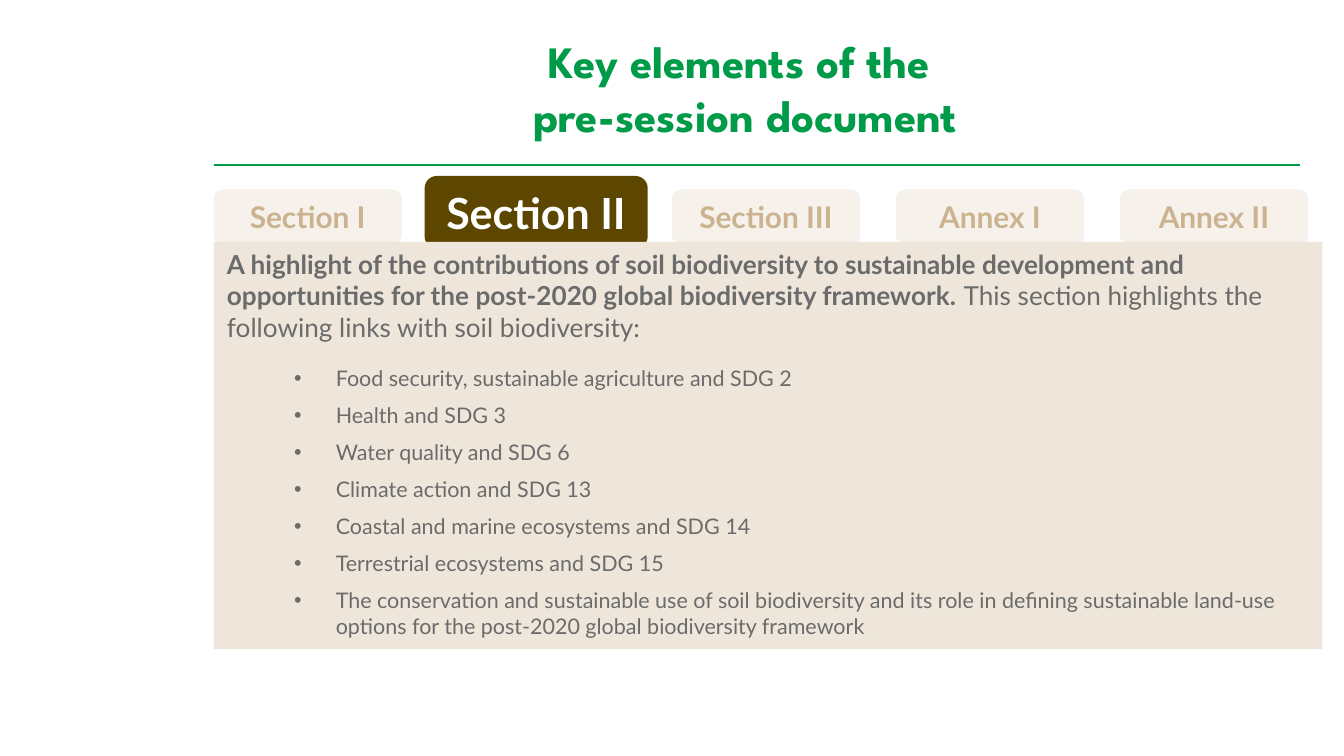
"""Build the slide on the key elements of the pre-session document."""
from dataclasses import dataclass

from lxml import etree
from pptx import Presentation
from pptx.dml.color import RGBColor
from pptx.enum.shapes import MSO_CONNECTOR as Connector, MSO_SHAPE as Shape
from pptx.enum.text import MSO_ANCHOR as Anchor, PP_ALIGN as Align
from pptx.oxml.ns import qn
from pptx.util import Inches, Pt


@dataclass(frozen=True)
class Theme:
    green: str = "009B48"
    tab_fill: str = "F6F1EA"
    tab_text: str = "CBB38F"
    active_fill: str = "5C4600"
    active_text: str = "FFFFFF"
    panel: str = "EEE6DA"
    body: str = "6B6B6B"
    title_font: str = "League Spartan"
    body_font: str = "Lato"
    title_size: float = 24
    tab_size: float = 16
    active_size: float = 23
    lead_size: float = 14
    bullet_size: float = 11.5


THEME = Theme()
LEFT = 1.59
TAB_TOP = 1.41
TAB_STEP = 5 / 3
TITLE = "Key elements of the \vpre-session document"
LATER_TABS = ("Section III", "Annex I", "Annex II")
LEAD = (
    "A highlight of the contributions of soil biodiversity to sustainable development and "
    "opportunities for the post-2020 global biodiversity framework. "
)
LEAD_END = "This section highlights the following links with soil biodiversity:"
LINKS = (
    "Food security, sustainable agriculture and SDG 2",
    "Health and SDG 3",
    "Water quality and SDG 6",
    "Climate action and SDG 13",
    "Coastal and marine ecosystems and SDG 14",
    "Terrestrial ecosystems and SDG 15",
    "The conservation and sustainable use of soil biodiversity and its role in defining "
    "sustainable land-use options for the post-2020 global biodiversity framework",
)


def format_runs(paragraph, size, color, bold=False, font=THEME.body_font):
    for run in paragraph.runs:
        run.font.name = font
        run.font.size = Pt(size)
        run.font.bold = bold
        run.font.color.rgb = RGBColor.from_string(color)


def add_title(slide):
    box = slide.shapes.add_textbox(Inches(LEFT), Inches(0.18), Inches(7.91), Inches(0.94))
    frame = box.text_frame
    frame.word_wrap = True
    frame.vertical_anchor = Anchor.MIDDLE
    frame.text = TITLE
    paragraph = frame.paragraphs[0]
    paragraph.alignment = Align.CENTER
    format_runs(paragraph, THEME.title_size, THEME.green, True, THEME.title_font)


def add_rule(slide):
    rule = slide.shapes.add_connector(
        Connector.STRAIGHT, Inches(LEFT), Inches(1.23), Inches(9.67), Inches(1.23)
    )
    rule.line.color.rgb = RGBColor.from_string(THEME.green)
    rule.line.width = Pt(1)
    etree.SubElement(rule._element.spPr, qn("a:effectLst"))


def add_block(slide, kind, left, top, width, height, fill):
    shape = slide.shapes.add_shape(kind, Inches(left), Inches(top), Inches(width), Inches(height))
    shape.shadow.inherit = False
    shape.fill.solid()
    shape.fill.fore_color.rgb = RGBColor.from_string(fill)
    shape.line.fill.background()
    shape.text_frame.word_wrap = True
    return shape


def add_tab(slide, label, left, top=TAB_TOP, width=1.4, height=0.41,
            fill=THEME.tab_fill, color=THEME.tab_text, size=THEME.tab_size):
    tab = add_block(slide, Shape.ROUNDED_RECTANGLE, left, top, width, height, fill)
    tab.text_frame.vertical_anchor = Anchor.MIDDLE
    tab.text_frame.text = label
    paragraph = tab.text_frame.paragraphs[0]
    paragraph.alignment = Align.CENTER
    format_runs(paragraph, size, color, True)


def add_bullet(frame, text):
    paragraph = frame.add_paragraph()
    paragraph.text = text
    paragraph.level = 1
    paragraph.alignment = Align.LEFT
    paragraph.space_before = Pt(6)
    properties = paragraph._p.get_or_add_pPr()
    properties.set("marL", str(Inches(0.81)))
    properties.set("indent", str(Inches(-0.31)))
    etree.SubElement(properties, qn("a:buFont"), typeface="Arial")
    etree.SubElement(properties, qn("a:buChar"), char="•")
    format_runs(paragraph, THEME.bullet_size, THEME.body)


def add_panel(slide):
    panel = add_block(slide, Shape.RECTANGLE, LEFT, 1.8, 8.25, 3.03, THEME.panel)
    frame = panel.text_frame
    frame.vertical_anchor = Anchor.TOP
    frame.text = LEAD
    lead = frame.paragraphs[0]
    lead.alignment = Align.LEFT
    lead.space_after = Pt(6)
    lead.add_run().text = LEAD_END
    format_runs(lead, THEME.lead_size, THEME.body)
    lead.runs[0].font.bold = True
    for link in LINKS:
        add_bullet(frame, link)


def main():
    presentation = Presentation()
    presentation.slide_width = Inches(10)
    presentation.slide_height = Inches(10 * 9 / 16)
    slide = presentation.slides.add_slide(presentation.slide_layouts[6])
    add_rule(slide)
    add_tab(slide, "Section I", LEFT)
    for index, label in enumerate(LATER_TABS):
        add_tab(slide, label, 5 + index * TAB_STEP)
    add_title(slide)
    add_tab(slide, "Section II", 3.16, 1.31, 1.66, 0.54,
            THEME.active_fill, THEME.active_text, THEME.active_size)
    add_panel(slide)
    presentation.save("out.pptx")


if __name__ == "__main__":
    main()
